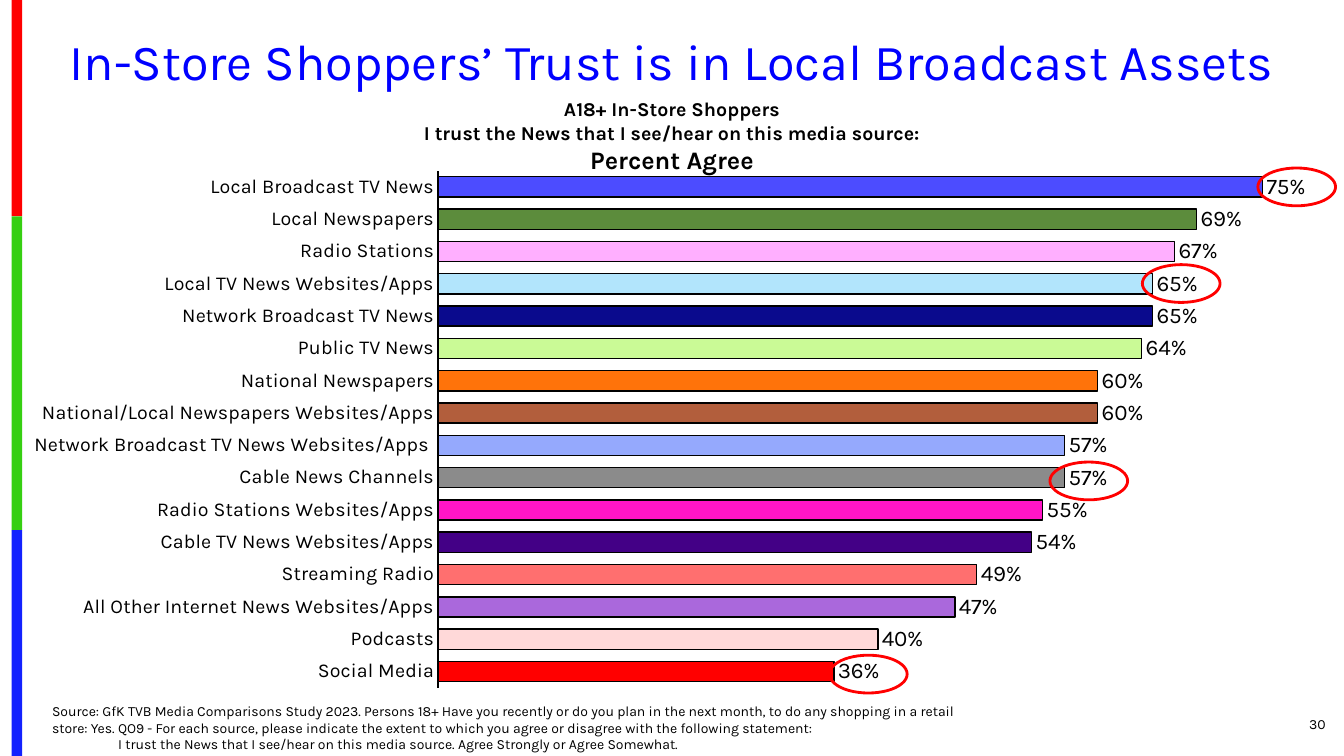
from typing import NamedTuple

import pptx
import pptx.chart.data
import pptx.dml.color
import pptx.enum.chart
import pptx.enum.shapes
import pptx.enum.text
import pptx.oxml
import pptx.util

EMU_PER_PX = 9525
FONT = "Karla"
BLACK = "000000"
ALIGN = pptx.enum.text.PP_ALIGN
ANCHOR = pptx.enum.text.MSO_ANCHOR
SHAPE = pptx.enum.shapes.MSO_SHAPE


class Box(NamedTuple):
    left: int
    top: int
    width: int
    height: int


class Stripe(NamedTuple):
    top: int
    bottom: int
    fill: str


class MediaSource(NamedTuple):
    name: str
    trust: float
    fill: str


class Line(NamedTuple):
    text: str
    size: int
    bold: bool = False
    indent: int = 0


STRIPES = [
    Stripe(0, 206, "FE0000"),
    Stripe(206, 505, "36CF12"),
    Stripe(505, 720, "1322FE"),
]
MEDIA_SOURCES = [
    MediaSource("Local Broadcast TV News", 0.75, "4C4CFF"),
    MediaSource("Local Newspapers", 0.69, "5C8C3C"),
    MediaSource("Radio Stations", 0.67, "FFAFFF"),
    MediaSource("Local TV News Websites/Apps", 0.65, "B2E5FC"),
    MediaSource("Network Broadcast TV News", 0.65, "0A0A8D"),
    MediaSource("Public TV News", 0.64, "CAFA96"),
    MediaSource("National Newspapers", 0.60, "FF730A"),
    MediaSource("National/Local Newspapers Websites/Apps", 0.60, "B25E3C"),
    MediaSource("Network Broadcast TV News Websites/Apps ", 0.57, "95A9FD"),
    MediaSource("Cable News Channels", 0.57, "8B8B8B"),
    MediaSource("Radio Stations Websites/Apps", 0.55, "FF15C7"),
    MediaSource("Cable TV News Websites/Apps", 0.54, "430086"),
    MediaSource("Streaming Radio", 0.49, "FF6F6F"),
    MediaSource("All Other Internet News Websites/Apps", 0.47, "AA68DC"),
    MediaSource("Podcasts", 0.40, "FFD9D9"),
    MediaSource("Social Media", 0.36, "FF0000"),
]
HIGHLIGHTS = [Box(left, top, 74, 36) for left, top in
              [(1198, 160), (1088, 252), (1000, 440), (790, 624)]]
TITLE = [Line("In-Store Shoppers’ Trust is in Local Broadcast Assets", 36)]
SUBTITLE = [
    Line("A18+ In-Store Shoppers", 14, True),
    Line("I trust the News that I see/hear on this media source:", 14, True),
    Line("Percent Agree", 18, True),
]
SOURCE_NOTE = [
    Line("Source: GfK TVB Media Comparisons Study 2023. Persons 18+ Have you recently "
         "or do you plan in the next month, to do any shopping in a retail store: Yes. "
         "QO9 - For each source, please indicate the extent to which you agree or "
         "disagree with the following statement:", 10),
    Line("I trust the News that I see/hear on this media source. "
         "Agree Strongly or Agree Somewhat.", 10, indent=63),
]


def px(length: int) -> pptx.util.Emu:
    return pptx.util.Emu(length * EMU_PER_PX)


def emu_box(box: Box) -> list[pptx.util.Emu]:
    return [px(length) for length in box]


def rgb(colour: str) -> pptx.dml.color.RGBColor:
    return pptx.dml.color.RGBColor.from_string(colour)


def style_font(font, size: int, colour: str = BLACK, bold: bool = False) -> None:
    font.name = FONT
    font.size = pptx.util.Pt(size)
    font.bold = bold
    font.color.rgb = rgb(colour)


def style_line(line, colour: str, width: float) -> None:
    line.color.rgb = rgb(colour)
    line.width = pptx.util.Pt(width)


def fill_text(shape, box: Box, lines: list[Line], align, anchor,
              colour: str = BLACK, spacing: float = 1.0) -> None:
    """Place a text box or placeholder and write its lines."""
    shape.left, shape.top, shape.width, shape.height = emu_box(box)
    frame = shape.text_frame
    frame.word_wrap = True
    frame.auto_size = pptx.enum.text.MSO_AUTO_SIZE.NONE
    frame.vertical_anchor = anchor
    frame.text = "\n".join(line.text for line in lines)
    for paragraph, line in zip(frame.paragraphs, lines):
        paragraph.alignment = align
        paragraph.line_spacing = spacing
        paragraph.space_before = pptx.util.Pt(0)
        properties = paragraph._p.get_or_add_pPr()
        properties.set("marL", "0")
        properties.set("indent", str(px(line.indent)))
        properties.append(properties.makeelement(pptx.oxml.ns.qn("a:buNone"), {}))
        for run in paragraph.runs:
            style_font(run.font, line.size, colour, line.bold)


def add_stripe(slide, stripe: Stripe) -> None:
    box = Box(11, stripe.top, 10, stripe.bottom - stripe.top)
    shape = slide.shapes.add_shape(SHAPE.RECTANGLE, *emu_box(box))
    shape.shadow.inherit = False
    shape.fill.solid()
    shape.fill.fore_color.rgb = rgb(stripe.fill)
    shape.line.fill.background()


def add_highlight(slide, box: Box) -> None:
    shape = slide.shapes.add_shape(SHAPE.OVAL, *emu_box(box))
    shape.shadow.inherit = False
    shape.fill.background()
    style_line(shape.line, "FF0000", 2)


def set_plot_layout(chart, x: float, y: float, w: float, h: float) -> None:
    """Fix the inner plot area as fractions of the chart."""
    plot_area = chart._chartSpace.chart.plotArea
    for old_layout in plot_area.findall(pptx.oxml.ns.qn("c:layout")):
        plot_area.remove(old_layout)
    values = {"layoutTarget": "inner", "xMode": "edge", "yMode": "edge",
              "x": x, "y": y, "w": w, "h": h}
    settings = "".join(f'<c:{name} val="{value}"/>' for name, value in values.items())
    plot_area.insert(0, pptx.oxml.parse_xml(
        f'<c:layout {pptx.oxml.ns.nsdecls("c")}>'
        f"<c:manualLayout>{settings}</c:manualLayout></c:layout>"))


def add_trust_chart(slide, box: Box) -> None:
    data = pptx.chart.data.CategoryChartData(number_format="0%")
    data.categories = [source.name for source in MEDIA_SOURCES]
    data.add_series("Series 1", [source.trust for source in MEDIA_SOURCES])
    chart = slide.shapes.add_chart(
        pptx.enum.chart.XL_CHART_TYPE.BAR_CLUSTERED, *emu_box(box), data).chart
    chart.has_legend = False
    chart.has_title = False
    style_font(chart.font, 10)
    set_plot_layout(chart, 0.311, 0.021, 0.676, 0.979)

    names = chart.category_axis
    names.reverse_order = True
    names.major_tick_mark = pptx.enum.chart.XL_TICK_MARK.NONE
    style_font(names.tick_labels.font, 14)
    style_line(names.format.line, BLACK, 1.5)
    percent = chart.value_axis
    percent.visible = False
    percent.has_major_gridlines = False
    percent.minimum_scale, percent.maximum_scale = 0, 0.8

    plot = chart.plots[0]
    plot.gap_width = 60
    plot.vary_by_categories = False
    for index, source in enumerate(MEDIA_SOURCES):
        bar = plot.series[0].points[index].format
        bar.fill.solid()
        bar.fill.fore_color.rgb = rgb(source.fill)
        style_line(bar.line, BLACK, 1)
    plot.has_data_labels = True
    labels = plot.data_labels
    labels.show_value = True
    labels.number_format = "0%"
    labels.number_format_is_linked = False
    labels.position = pptx.enum.chart.XL_LABEL_POSITION.OUTSIDE_END
    style_font(labels.font, 16)


def main() -> None:
    presentation = pptx.Presentation()
    presentation.slide_width, presentation.slide_height = px(1280), px(720)
    slide = presentation.slides.add_slide(presentation.slide_layouts[1])
    title, source_note = slide.placeholders
    for stripe in STRIPES:
        add_stripe(slide, stripe)
    add_trust_chart(slide, Box(32, 152, 1239, 504))
    fill_text(title, Box(44, 30, 1192, 62), TITLE, ALIGN.CENTER, ANCHOR.MIDDLE,
              "0000FF", 0.9)
    fill_text(source_note, Box(40, 664, 896, 59), SOURCE_NOTE, ALIGN.LEFT, ANCHOR.TOP)
    for box, lines, align, anchor in [
        (Box(984, 670, 288, 38), [Line("30", 10)], ALIGN.RIGHT, ANCHOR.MIDDLE),
        (Box(180, 88, 920, 84), SUBTITLE, ALIGN.CENTER, ANCHOR.TOP),
    ]:
        fill_text(slide.shapes.add_textbox(*emu_box(box)), box, lines, align, anchor)
    for box in HIGHLIGHTS:
        add_highlight(slide, box)
    presentation.save("out.pptx")


if __name__ == "__main__":
    main()
